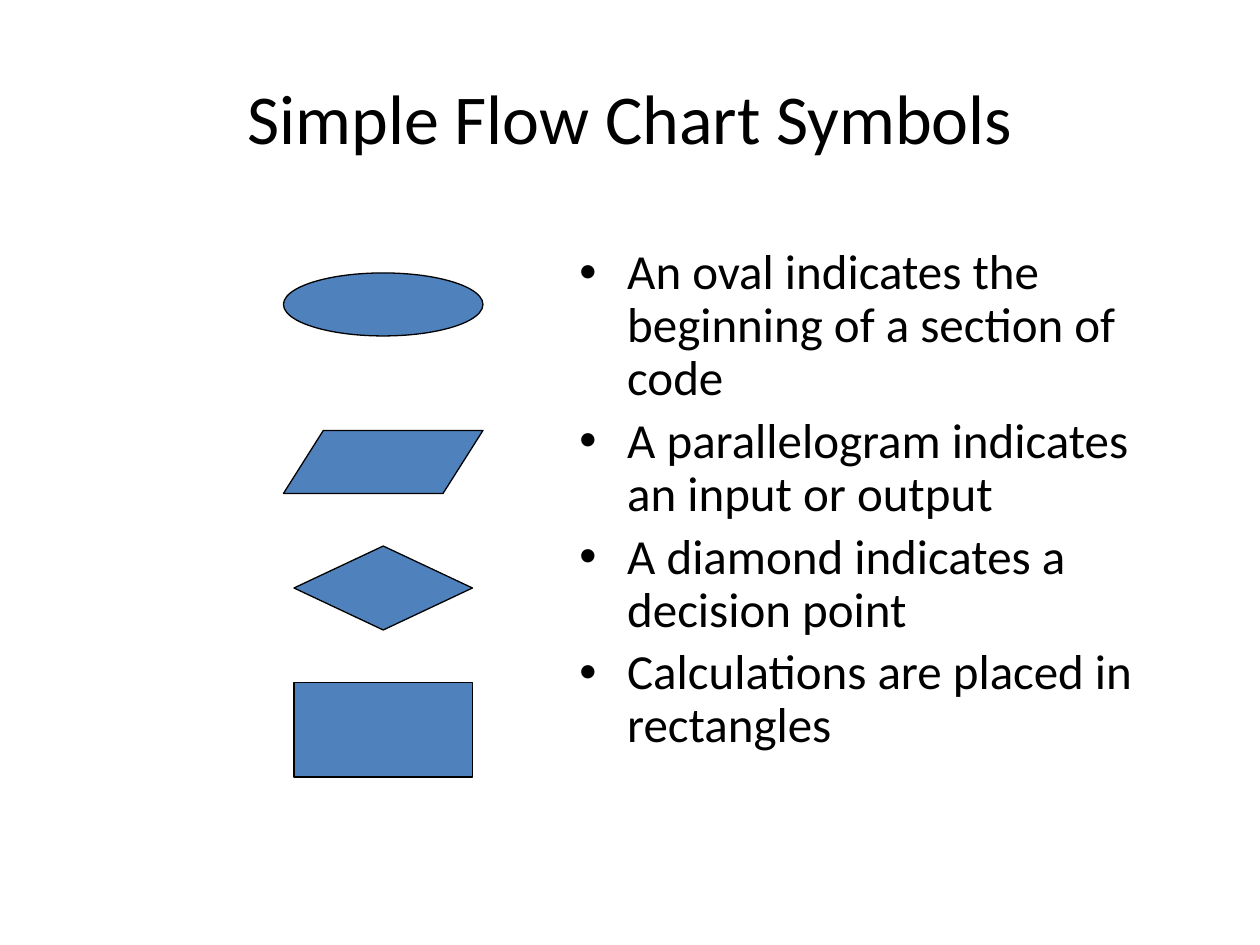
from lxml import etree
from pptx import Presentation
from pptx import util as u
from pptx.dml.color import RGBColor
from pptx.enum import shapes, text
from pptx.oxml.ns import qn

CELL = u.Inches(1) / 12
FONT = "Calibri"
BLACK = "000000"
BLUE = "4F81BD"

SYMBOLS = [
    (shapes.MSO_SHAPE.OVAL, 0, 19, 6),
    (shapes.MSO_SHAPE.FLOWCHART_DATA, 15, 19, 6),
    (shapes.MSO_SHAPE.FLOWCHART_DECISION, 26, 17, 8),
    (shapes.MSO_SHAPE.FLOWCHART_PROCESS, 39, 17, 9),
]
MEANINGS = [
    "An oval indicates the beginning of a section of code",
    "A parallelogram indicates an input or output",
    "A diamond indicates a decision point",
    "Calculations are placed in rectangles",
]


def color(value):
    return RGBColor.from_string(value)


def grid(*cells):
    return [u.Emu(round(cell * CELL)) for cell in cells]


def set_font(paragraph, size):
    paragraph.font.name = FONT
    paragraph.font.size = u.Pt(size)
    paragraph.font.color.rgb = color(BLACK)


def add_bullet(paragraph, indent):
    properties = paragraph._p.get_or_add_pPr()
    properties.set("marL", str(indent))
    properties.set("indent", str(-indent))
    bullet_font = etree.SubElement(properties, qn("a:buFont"))
    bullet_font.set("typeface", "Arial")
    etree.SubElement(properties, qn("a:buChar")).set("char", "•")


def add_title(slide, box):
    frame = slide.shapes.add_textbox(*grid(*box)).text_frame
    frame.word_wrap = True
    frame.vertical_anchor = text.MSO_ANCHOR.MIDDLE
    title = frame.paragraphs[0]
    title.text = "Simple Flow Chart Symbols"
    title.alignment = text.PP_ALIGN.CENTER
    set_font(title, 40)


def add_meanings(slide, box):
    frame = slide.shapes.add_textbox(*grid(*box)).text_frame
    frame.word_wrap = True
    frame.text = "\n".join(MEANINGS)
    for meaning in frame.paragraphs:
        meaning.line_spacing = 0.9
        meaning.space_before = u.Pt(5.6)
        set_font(meaning, 28)
        add_bullet(meaning, u.Inches(0.38))


def add_symbols(slide, box):
    left, top, column_width, _ = box
    for kind, row, width, height in SYMBOLS:
        place = grid(left + (column_width - width) / 2, top + row, width, height)
        symbol = slide.shapes.add_shape(kind, *place)
        symbol.shadow.inherit = False
        symbol.fill.solid()
        symbol.fill.fore_color.rgb = color(BLUE)
        symbol.line.color.rgb = color(BLACK)
        symbol.line.width = u.Pt(0.75)


def main():
    deck = Presentation()
    deck.slide_width, deck.slide_height = grid(120, 90)
    slide = deck.slides.add_slide(deck.slide_layouts[6])
    add_title(slide, (6, 3.6, 108, 15))
    add_meanings(slide, (54, 23, 60, 53))
    add_symbols(slide, (27, 26, 19, 48))
    deck.save("out.pptx")


if __name__ == "__main__":
    main()
